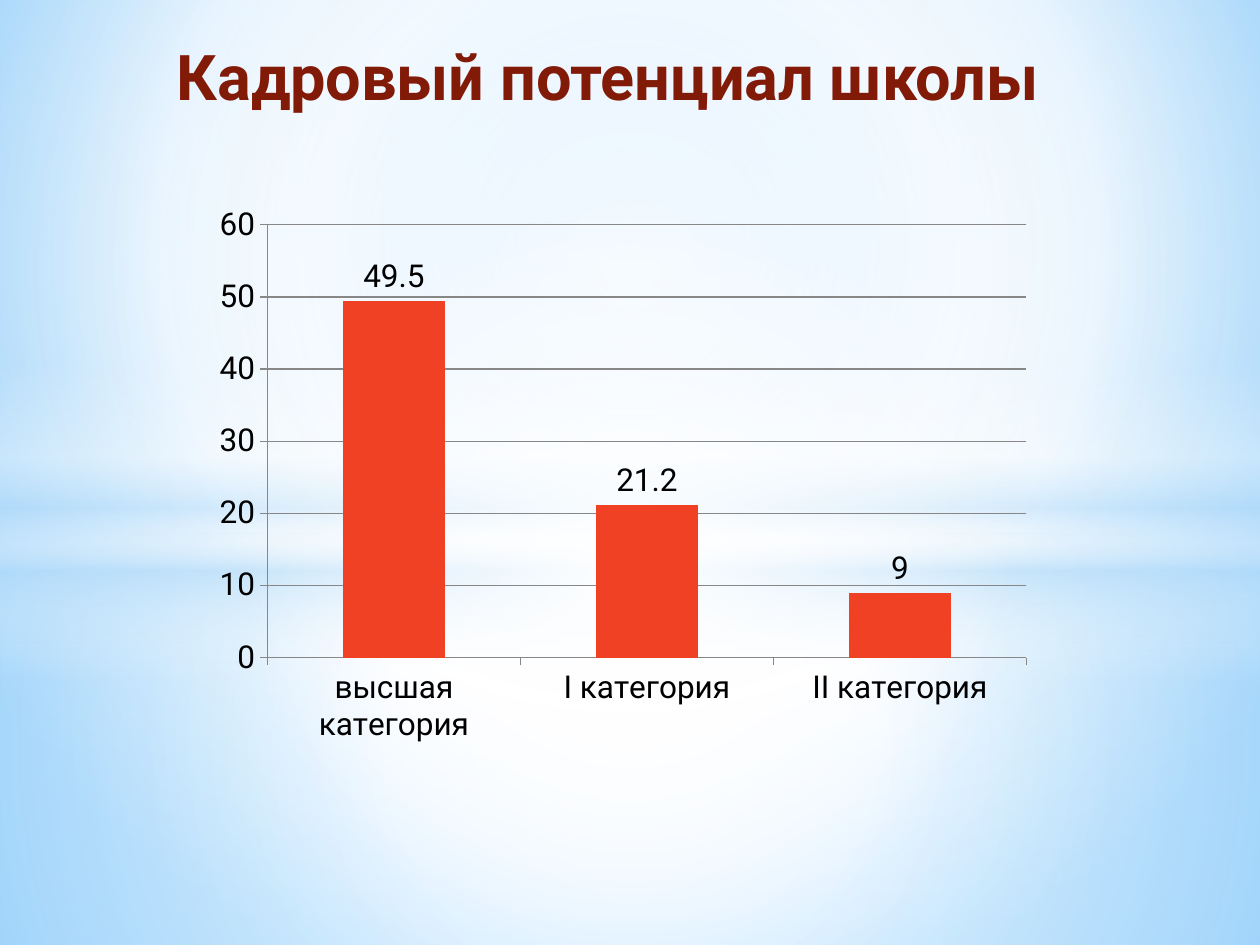
import pptx
import pptx.util
import pptx.chart.data
import pptx.dml.color
import pptx.enum.chart
import pptx.enum.shapes
import pptx.enum.text
import pptx.oxml
import pptx.oxml.ns

Inch, Pt = pptx.util.Inches, pptx.util.Pt
Kind = pptx.enum.shapes.MSO_SHAPE
WIDE, HIGH = 10, 7.5
FONT = "Roboto"
COLORS = {"title": "821A08", "bar": "F14124", "text": "000000", "line": "878787",
          "white": "FFFFFF", "mist": "B4DCFA", "sky": "9ED5FF", "deep": "5BB9FF"}

TITLE = "Кадровый потенциал школы"
RATES = {"высшая категория": 49.5, "I категория": 21.2, "II категория": 9}

MID = (50, 50, 50, 50)
BACK = ([(0, "sky", 100), (60, "white", 100), (100, "deep", 100)], (20, 10, 20, 60))
LAYERS = [
    (Kind.RECTANGLE, 4.23, 3.27,
     [(0, "white", 91), (37, "white", 76), (100, "mist", 79)], MID),
    (Kind.RECTANGLE, 0, 4.23,
     [(0, "white", 89), (48, "white", 62), (100, "mist", 79)], MID),
    (Kind.RECTANGLE, 2.9, 2.5,
     [(0, "white", 0), (29, "white", 30), (45, "mist", 40), (55, "white", 26),
      (65, "mist", 60), (100, "white", 0)], None),
    (Kind.OVAL, 1.75, 5.58, [(0, "white", 100), (54, "white", 0)], MID),
]


def color(name):
    return pptx.dml.color.RGBColor.from_string(COLORS[name])


def shade(fill, host, stops, focus):
    fill.gradient()
    old = host.find(".//" + pptx.oxml.ns.qn("a:gradFill"))
    marks = "".join(
        f'<a:gs pos="{pos * 1000}"><a:srgbClr val="{COLORS[name]}">'
        f'<a:alpha val="{alpha * 1000}"/></a:srgbClr></a:gs>'
        for pos, name, alpha in stops)
    if focus:
        sides = " ".join(f'{side}="{n * 1000}"' for side, n in zip("ltrb", focus))
        way = f'<a:path path="circle"><a:fillToRect {sides}/></a:path>'
    else:
        way = '<a:lin ang="5400000" scaled="0"/>'
    new = pptx.oxml.parse_xml(
        f'<a:gradFill {pptx.oxml.ns.nsdecls("a")} rotWithShape="1">'
        f'<a:gsLst>{marks}</a:gsLst>{way}</a:gradFill>')
    old.getparent().replace(old, new)


def add_layers(slide):
    shade(slide.background.fill, slide.element, *BACK)
    for kind, top, high, stops, focus in LAYERS:
        shape = slide.shapes.add_shape(kind, 0, Inch(top), Inch(WIDE), Inch(high))
        shape.shadow.inherit = False
        shape.line.fill.background()
        shade(shape.fill, shape.element, stops, focus)


def add_title(slide):
    box = slide.shapes.add_textbox(Inch(0.8), Inch(0.21), Inch(7.85), Inch(0.87))
    frame = box.text_frame
    frame.word_wrap = True
    frame.margin_left, frame.margin_top = Inch(0.3), Inch(0.09)
    frame.text = TITLE
    para = frame.paragraphs[0]
    para.alignment = pptx.enum.text.PP_ALIGN.CENTER
    para.font.name, para.font.size, para.font.bold = FONT, Pt(36), True
    para.font.color.rgb = color("title")


def add_chart(slide):
    data = pptx.chart.data.CategoryChartData()
    data.categories = list(RATES)
    data.add_series("Series 1", list(RATES.values()))
    chart = slide.shapes.add_chart(
        pptx.enum.chart.XL_CHART_TYPE.COLUMN_CLUSTERED,
        Inch(1.61), Inch(1.55), Inch(6.67), Inch(4.44), data).chart
    chart.has_legend = chart.has_title = False
    chart.font.name, chart.font.size = FONT, Pt(18)
    chart.font.color.rgb = color("text")
    axis = chart.value_axis
    axis.minimum_scale, axis.maximum_scale, axis.major_unit = 0, 60, 10
    axis.has_major_gridlines = True
    for line in (axis.format.line, axis.major_gridlines.format.line,
                 chart.category_axis.format.line):
        line.color.rgb = color("line")
        line.width = Pt(0.75)
    plot = chart.plots[0]
    plot.gap_width, plot.vary_by_categories = 150, False
    bars = plot.series[0]
    bars.format.fill.solid()
    bars.format.fill.fore_color.rgb = color("bar")
    tags = bars.data_labels
    tags.show_value = True
    tags.position = pptx.enum.chart.XL_LABEL_POSITION.OUTSIDE_END


def main():
    deck = pptx.Presentation()
    deck.slide_width, deck.slide_height = Inch(WIDE), Inch(HIGH)
    slide = deck.slides.add_slide(deck.slide_layouts[6])
    add_layers(slide)
    add_title(slide)
    add_chart(slide)
    deck.save("out.pptx")


if __name__ == "__main__":
    main()
